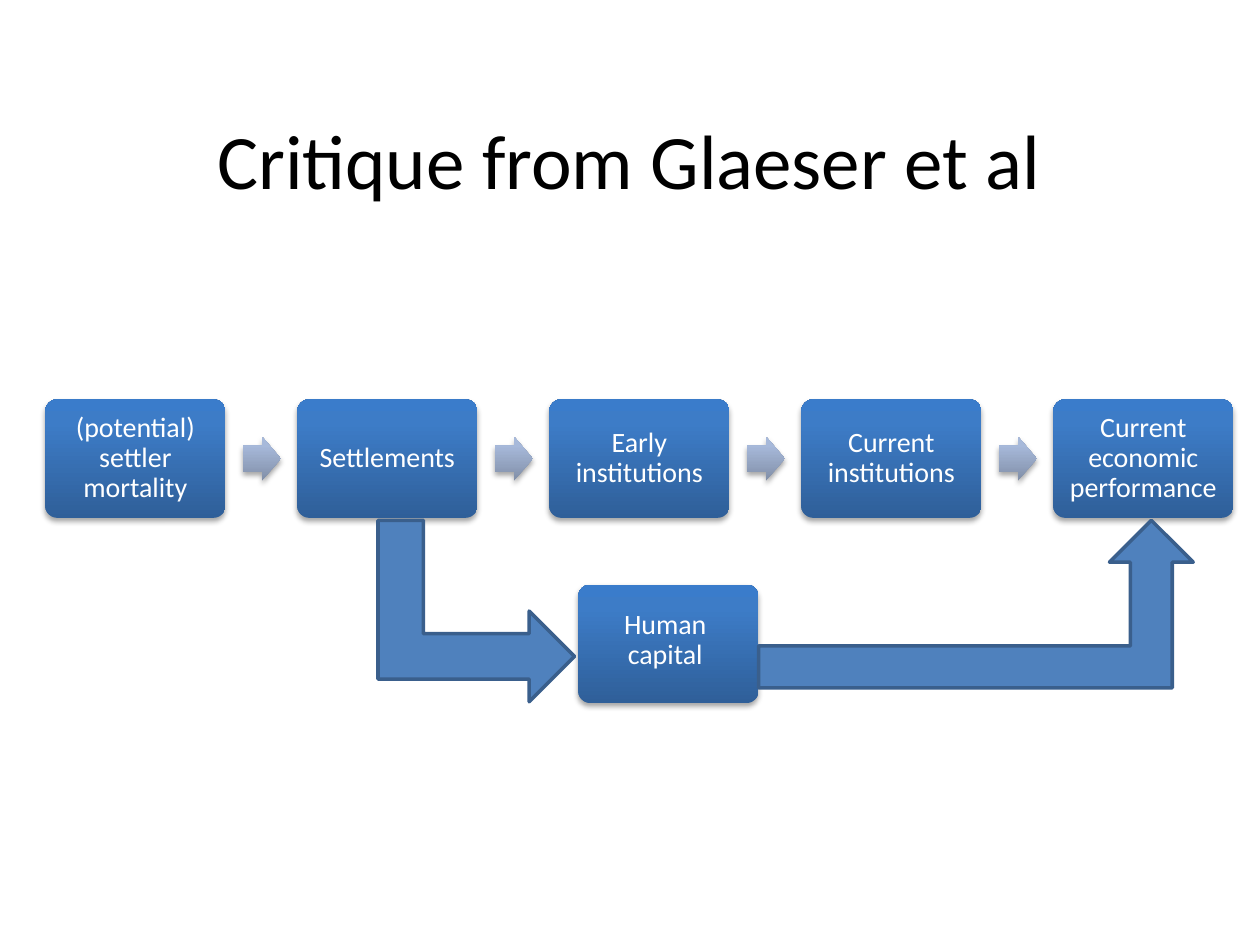
"""Build a causal chain slide with a bypass through human capital."""

from lxml.etree import SubElement
from pptx import Presentation
from pptx.dml.color import RGBColor
from pptx.enum.shapes import MSO_SHAPE
from pptx.enum.text import MSO_ANCHOR, PP_ALIGN
from pptx.oxml.ns import qn
from pptx.util import Inches, Pt

BLACK = RGBColor(0x00, 0x00, 0x00)
WHITE = RGBColor(0xFF, 0xFF, 0xFF)
BENT_FILL = RGBColor(0x4F, 0x81, 0xBD)
BENT_LINE = RGBColor(0x3A, 0x5F, 0x8C)
BOX_STOPS = (
    (0, RGBColor(0x2F, 0x5F, 0x99)),
    (80, RGBColor(0x3D, 0x7C, 0xC7)),
    (100, RGBColor(0x3A, 0x7C, 0xCB)),
)
ARROW_STOPS = (
    (0, RGBColor(0x81, 0x8F, 0xA8)),
    (80, RGBColor(0xA7, 0xB9, 0xDA)),
    (100, RGBColor(0xA7, 0xBA, 0xDC)),
)

STEPS = (
    "(potential) settler mortality",
    "Settlements",
    "Early institutions",
    "Current institutions",
    "Current economic performance",
)
CHAIN_LEFT, CHAIN_TOP, PITCH = 0.36, 3.17, 2.0
BOX_WIDTH, BOX_HEIGHT = 1.43, 0.94
ARROW_WIDTH, ARROW_HEIGHT, ARROW_OFFSET = 0.3, 0.35, 1.57

FRAME_FORMAT = {"word_wrap": True, "vertical_anchor": MSO_ANCHOR.MIDDLE}
TITLE_FONT = {"name": "Calibri", "size": Pt(44)}
BOX_FONT = {"name": "Calibri", "size": Pt(16)}


def set_attributes(target, values):
    """Set every named value on the target."""
    for name, value in values.items():
        setattr(target, name, value)


def write_text(shape, text, font, color, line_spacing, insets):
    """Write one centred paragraph with left, top, right and bottom insets."""
    frame = shape.text_frame
    sides = ("margin_left", "margin_top", "margin_right", "margin_bottom")
    set_attributes(frame, FRAME_FORMAT)
    set_attributes(frame, dict(zip(sides, map(Inches, insets))))
    frame.text = text
    paragraph = frame.paragraphs[0]
    set_attributes(paragraph, {"alignment": PP_ALIGN.CENTER, "line_spacing": line_spacing})
    set_attributes(paragraph.font, font)
    paragraph.font.color.rgb = color


def add_color(parent, color):
    """Add an RGB colour element and return it."""
    return SubElement(parent, qn("a:srgbClr"), val=str(color))


def add_preset(slide, preset, left, top, width, height):
    """Add a preset shape without the theme shadow."""
    shape = slide.shapes.add_shape(
        preset, Inches(left), Inches(top), Inches(width), Inches(height)
    )
    shape.shadow.inherit = False
    return shape


def add_shaded(slide, preset, bounds, stops, adjustments):
    """Add a borderless shape with a bottom-up gradient and a soft shadow."""
    shape = add_preset(slide, preset, *bounds)
    for index, value in enumerate(adjustments):
        shape.adjustments[index] = value
    shape.line.fill.background()
    shape.fill.gradient()
    shape.fill.gradient_angle = 90
    properties = shape.element.spPr
    stop_list = properties.find(qn("a:gradFill")).find(qn("a:gsLst"))
    stop_list.clear()
    for position, color in stops:
        add_color(SubElement(stop_list, qn("a:gs"), pos=str(position * 1000)), color)
    shadow = SubElement(
        properties.find(qn("a:effectLst")),
        qn("a:outerShdw"),
        blurRad=str(Pt(3.1)),
        dist=str(Pt(1.8)),
        dir="5400000",
        rotWithShape="0",
    )
    SubElement(add_color(shadow, BLACK), qn("a:alpha"), val="35000")
    return shape


def add_box(slide, text, left, top, insets=(0.09, 0.09, 0.09, 0.09)):
    """Add a rounded box with its label."""
    bounds = (left, top, BOX_WIDTH, BOX_HEIGHT)
    box = add_shaded(slide, MSO_SHAPE.ROUNDED_RECTANGLE, bounds, BOX_STOPS, (0.1,))
    write_text(box, text, BOX_FONT, WHITE, 0.9, insets)


def add_chain(slide):
    """Add the row of boxes with an arrow in each gap."""
    arrow_top = CHAIN_TOP + (BOX_HEIGHT - ARROW_HEIGHT) / 2
    for index, step in enumerate(STEPS):
        left = CHAIN_LEFT + index * PITCH
        add_box(slide, step, left, CHAIN_TOP)
        if index < len(STEPS) - 1:
            bounds = (left + ARROW_OFFSET, arrow_top, ARROW_WIDTH, ARROW_HEIGHT)
            add_shaded(slide, MSO_SHAPE.RIGHT_ARROW, bounds, ARROW_STOPS, (0.6, 0.5))


def add_bent_arrow(slide, left, top, width, height, rotation=0):
    """Add an outlined bent arrow."""
    arrow = add_preset(slide, MSO_SHAPE.BENT_UP_ARROW, left, top, width, height)
    arrow.rotation = rotation
    arrow.fill.solid()
    arrow.fill.fore_color.rgb = BENT_FILL
    arrow.line.color.rgb = BENT_LINE
    arrow.line.width = Pt(2)


def add_title(slide, text):
    """Place and format the title placeholder."""
    title = slide.shapes.title
    bounds = {"left": 0.79, "top": 0.72, "width": 8.41, "height": 1.15}
    set_attributes(title, {name: Inches(value) for name, value in bounds.items()})
    write_text(title, text, TITLE_FONT, BLACK, 0.95, (0, 0, 0, 0))


def main():
    """Build and save the presentation."""
    presentation = Presentation()
    presentation.slide_width = Inches(10)
    presentation.slide_height = Inches(7.5)
    slide = presentation.slides.add_slide(presentation.slide_layouts[5])
    add_title(slide, "Critique from Glaeser et al")
    add_chain(slide)
    add_box(slide, "Human capital", 4.59, 4.64, (0.07, 0.07, 0.12, 0.13))
    add_bent_arrow(slide, 3.06, 4.07, 1.44, 1.56, rotation=90)
    add_bent_arrow(slide, 6.02, 4.13, 3.45, 1.33)
    presentation.save("out.pptx")


if __name__ == "__main__":
    main()
